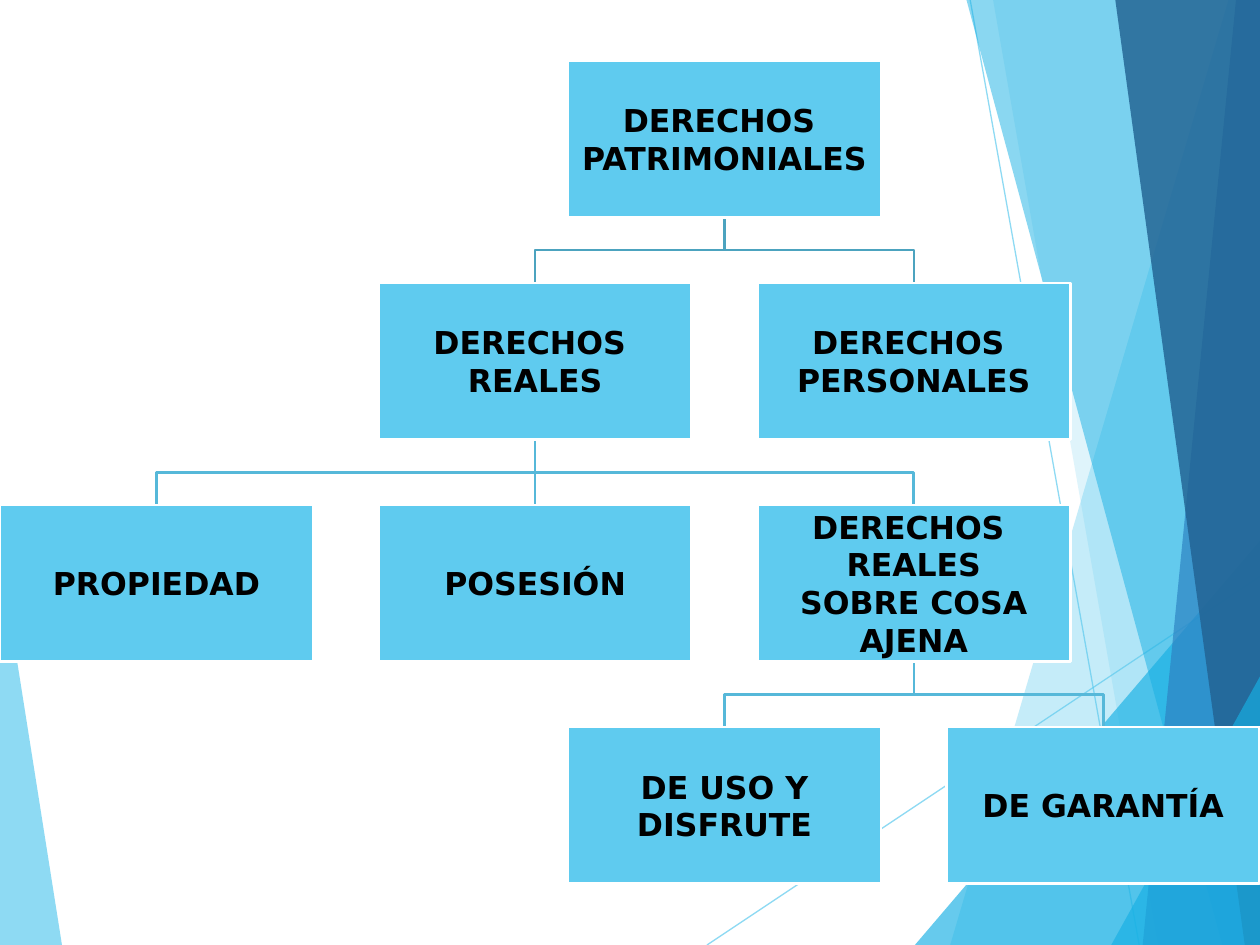
from dataclasses import dataclass
from typing import Optional

import pptx
import pptx.dml.color
import pptx.enum.shapes
import pptx.enum.text
import pptx.oxml
import pptx.util
from pptx.util import Pt

SLIDE_W, SLIDE_H = 720, 540
BOX_W, BOX_H = 178.8, 89.4
FIRST_TOP = 34.8
HALF_COLUMN, ROW_STEP = 108.2, 126.9
SKY, CYAN, BLUE, NAVY = "5FCBEF", "17B0E4", "2E83C3", "226292"
NS = "http://schemas.openxmlformats.org/drawingml/2006/main"


@dataclass(frozen=True)
class Facet:
    """A translucent polygon of the backdrop."""
    corners: tuple[tuple[float, float], ...]
    color: str
    opacity: int


@dataclass(frozen=True)
class Right:
    """A box of the tree; column counts half column widths."""
    lines: tuple[str, ...]
    column: int
    row: int
    parent: Optional["Right"] = None

    @property
    def left(self) -> float:
        return self.column * HALF_COLUMN

    @property
    def top(self) -> float:
        return FIRST_TOP + self.row * ROW_STEP

    @property
    def center(self) -> float:
        return self.left + BOX_W / 2


def right_facet(top_x: float, bottom_x: float, color: str, opacity: int) -> Facet:
    """Area between a slanted edge and the right side of the slide."""
    corners = ((top_x, 0), (bottom_x, SLIDE_H), (SLIDE_W, SLIDE_H), (SLIDE_W, 0))
    return Facet(corners, color, opacity)


def corner_facet(bottom_x: float, right_y: float) -> Facet:
    """Triangle in the lower right corner of the slide."""
    corners = ((bottom_x, SLIDE_H), (SLIDE_W, right_y), (SLIDE_W, SLIDE_H))
    return Facet(corners, CYAN, 66)


LEFT_FACET = Facet(((0, 316), (35.4, SLIDE_H), (0, SLIDE_H)), SKY, 70)
RAYS = (((404, 540), (720.5, 329)), ((554.4, 0), (651, 540)))
RIGHT_FACETS = (
    right_facet(702, 543, SKY, 36),
    right_facet(567.5, 661.8, SKY, 20),
    corner_facet(522.8, 309),
    right_facet(552.3, 698.4, CYAN, 50),
    right_facet(706.3, 653, BLUE, 70),
    right_facet(637.3, 711.3, NAVY, 82),
    corner_facet(635, 386.5),
)

patrimonial = Right(("DERECHOS ", "PATRIMONIALES"), 3, 0)
real = Right(("DERECHOS ", "REALES"), 2, 1, patrimonial)
personal = Right(("DERECHOS ", "PERSONALES"), 4, 1, patrimonial)
over_others = Right(("DERECHOS ", "REALES", "SOBRE COSA", "AJENA"), 4, 2, real)
RIGHTS = (
    patrimonial, real, personal,
    Right(("PROPIEDAD",), 0, 2, real),
    Right(("POSESIÓN",), 2, 2, real),
    over_others,
    Right(("DE USO Y", "DISFRUTE"), 3, 3, over_others),
    Right(("DE GARANTÍA",), 5, 3, over_others),
)


def set_color(target, color: str, opacity: int = 100) -> None:
    """Colour a fill (of a shape or a line) or a font."""
    if hasattr(target, "solid"):
        target.solid()
        target.fore_color.rgb = pptx.dml.color.RGBColor.from_string(color)
    else:
        target.color.rgb = pptx.dml.color.RGBColor.from_string(color)
    if opacity < 100:
        tone = target._xPr.find(f".//{{{NS}}}srgbClr")
        tone.append(pptx.oxml.parse_xml(f'<a:alpha xmlns:a="{NS}" val="{opacity * 1000}"/>'))


def draw_outline(shapes, points, closed: bool):
    start, *rest = [(Pt(x), Pt(y)) for x, y in points]
    builder = shapes.build_freeform(*start, scale=1.0)
    builder.add_line_segments(rest, close=closed)
    outline = builder.convert_to_shape()
    outline.shadow.inherit = False
    return outline


def draw_facet(shapes, facet: Facet) -> None:
    area = draw_outline(shapes, facet.corners, closed=True)
    set_color(area.fill, facet.color, facet.opacity)
    area.line.fill.background()


def draw_line(shapes, start, end, color: str, width: float, opacity: int = 100) -> None:
    line = shapes.add_connector(
        pptx.enum.shapes.MSO_CONNECTOR.STRAIGHT, *(Pt(value) for value in (*start, *end)))
    line.line.width = Pt(width)
    set_color(line.line.fill, color, opacity)
    line._element.spPr.append(pptx.oxml.parse_xml(f'<a:effectLst xmlns:a="{NS}"/>'))


def draw_branch(shapes, child: Right) -> None:
    """Join a box to its parent, bending halfway down the gap."""
    color = "4CA3BF" if child.row == 1 else "56B8D9"
    start = (child.parent.center, child.parent.top + BOX_H)
    end = (child.center, child.top)
    if child.column == child.parent.column:
        draw_line(shapes, start, end, color, 1.5)
        return
    middle = (start[1] + end[1]) / 2
    bend = draw_outline(
        shapes, (start, (start[0], middle), (end[0], middle), end), closed=False)
    bend.fill.background()
    bend.line.width = Pt(1.5)
    set_color(bend.line.fill, color)


def draw_right(shapes, right: Right) -> None:
    box = shapes.add_shape(
        pptx.enum.shapes.MSO_SHAPE.RECTANGLE,
        Pt(right.left), Pt(right.top), Pt(BOX_W), Pt(BOX_H))
    box.shadow.inherit = False
    set_color(box.fill, SKY)
    box.line.width = Pt(1.5)
    set_color(box.line.fill, "FFFFFF")
    frame = box.text_frame
    frame.word_wrap = True
    frame.vertical_anchor = pptx.enum.text.MSO_ANCHOR.MIDDLE
    frame.margin_left = frame.margin_right = Pt(0.8)
    frame.margin_top = frame.margin_bottom = Pt(0.8)
    frame.text = "\n".join(right.lines)
    for paragraph in frame.paragraphs:
        paragraph.alignment = pptx.enum.text.PP_ALIGN.CENTER
        paragraph.font.name = "DejaVu Sans"
        paragraph.font.size = Pt(18)
        paragraph.font.bold = True
        set_color(paragraph.font, "000000")


def main() -> None:
    presentation = pptx.Presentation()
    presentation.slide_width, presentation.slide_height = Pt(SLIDE_W), Pt(SLIDE_H)
    shapes = presentation.slides.add_slide(presentation.slide_layouts[6]).shapes
    draw_facet(shapes, LEFT_FACET)
    for start, end in RAYS:
        draw_line(shapes, start, end, SKY, 0.75, 70)
    for facet in RIGHT_FACETS:
        draw_facet(shapes, facet)
    for right in RIGHTS:
        if right.parent:
            draw_branch(shapes, right)
    for right in RIGHTS:
        draw_right(shapes, right)
    presentation.save("out.pptx")


if __name__ == "__main__":
    main()
